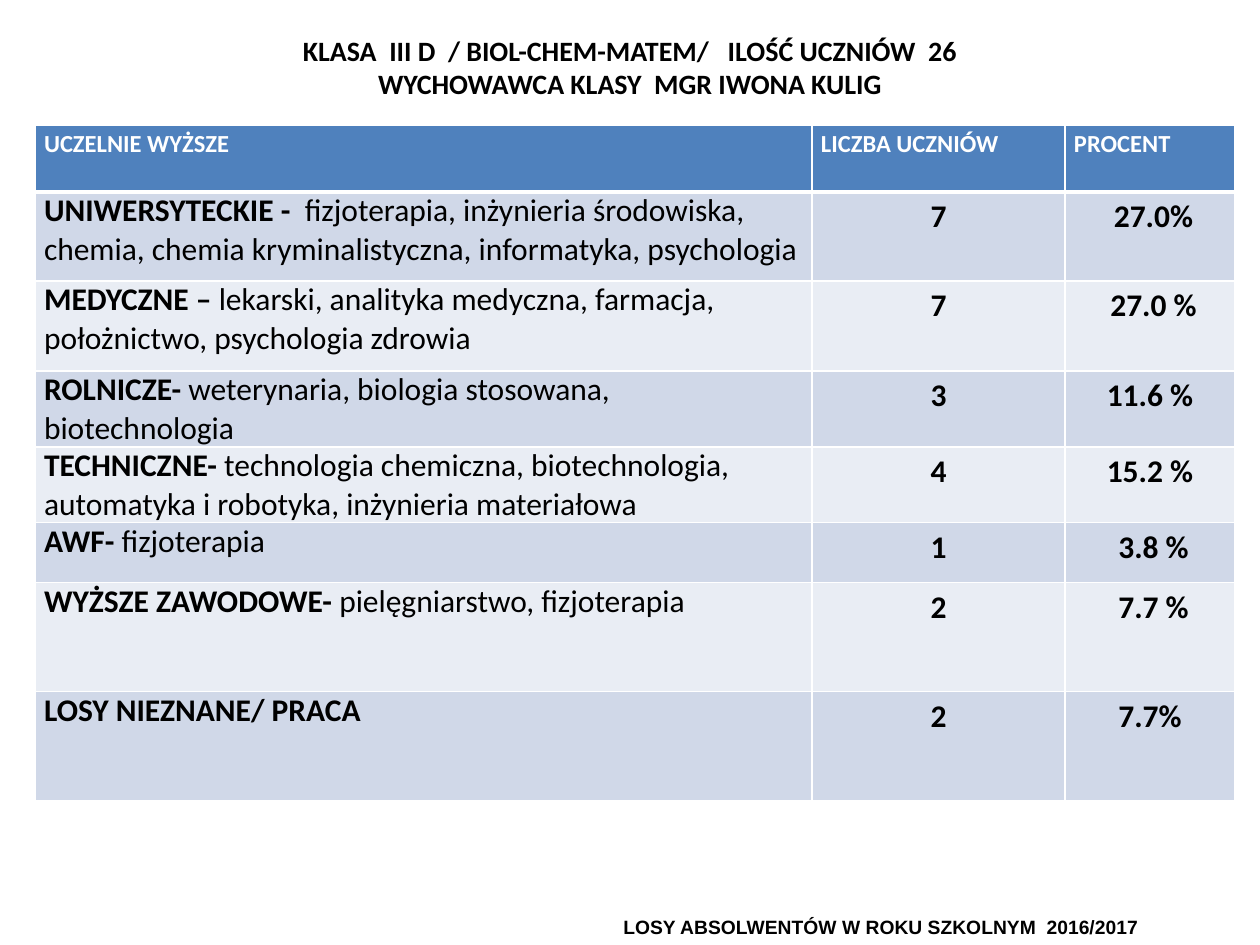
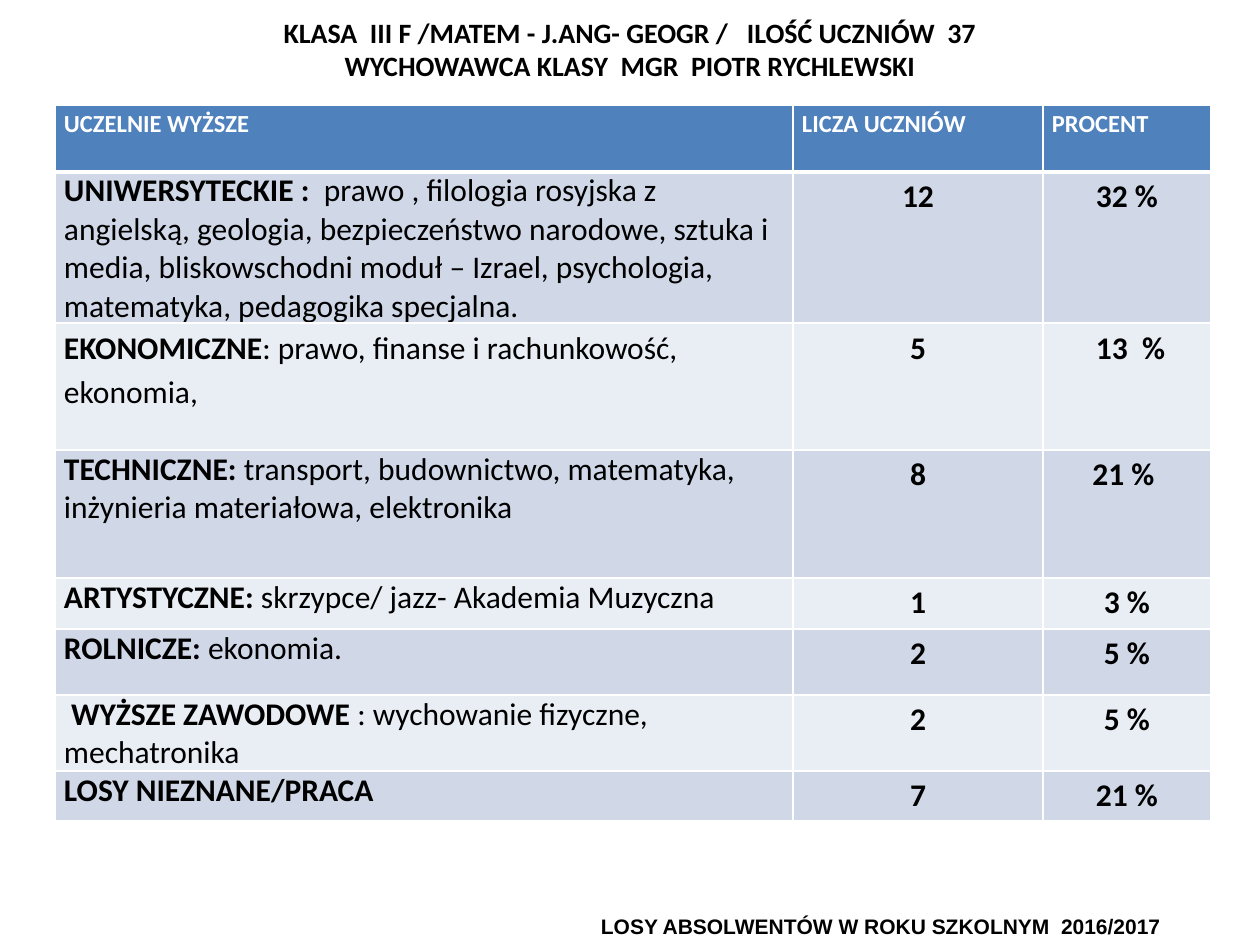
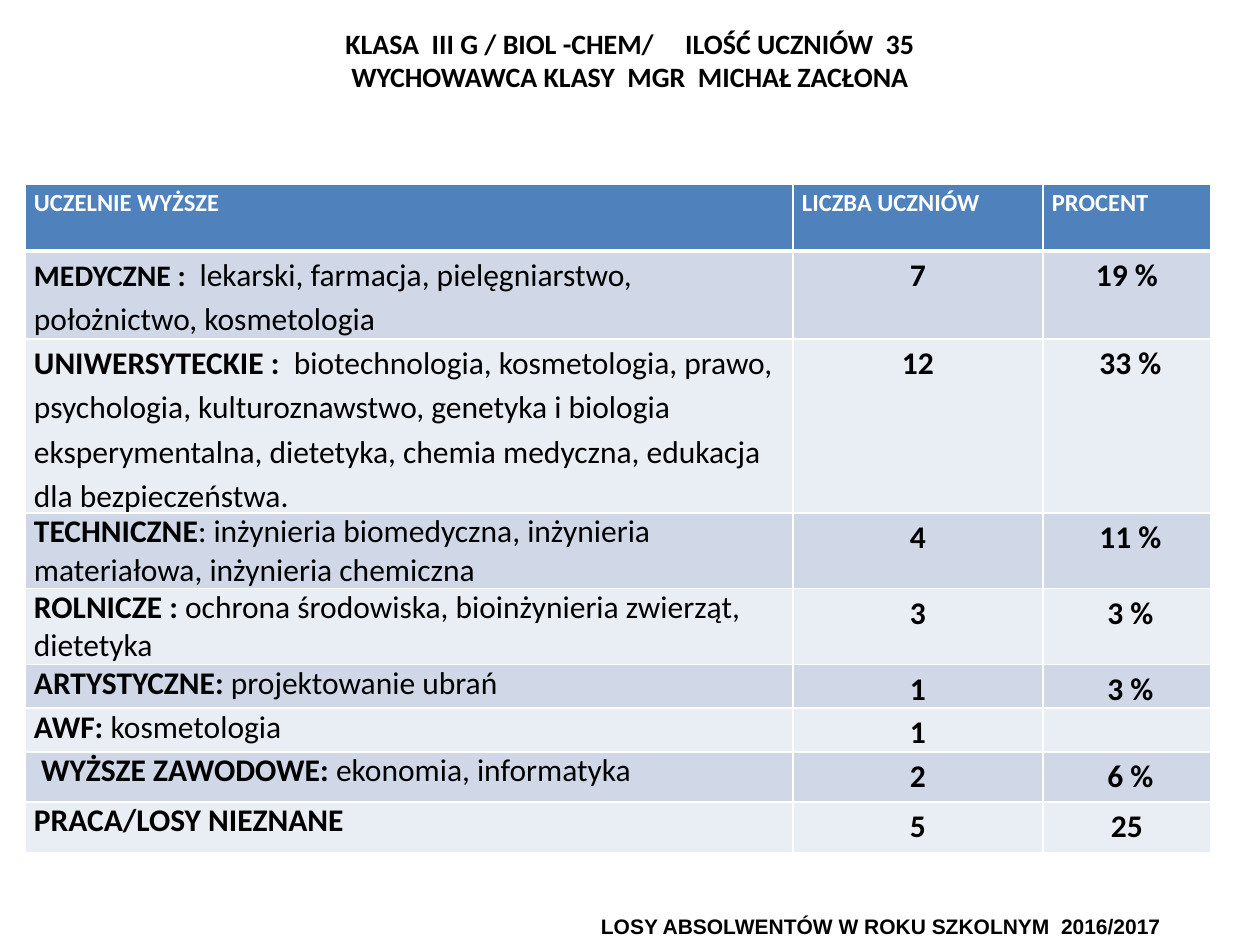
from dataclasses import dataclass

from lxml.etree import SubElement
from pptx import Presentation
from pptx.dml.color import RGBColor
from pptx.enum.text import MSO_ANCHOR as Anchor, MSO_AUTO_SIZE as AutoSize, PP_ALIGN as Align
from pptx.oxml.ns import qn
from pptx.util import Emu, Pt

EMU_PER_PX = 914400 / 126


@dataclass(frozen=True)
class Theme:
    """Colours, fonts and type sizes shared by the slides."""
    black: str = "000000"
    white: str = "FFFFFF"
    header: str = "4F81BD"
    bands: tuple = ("D0D8E8", "E9EDF4")
    body_font: str = "Calibri"
    footer_font: str = "Arial"
    title_size: int = 16
    header_size: int = 14
    body_size: int = 18
    loose: float = 1.15
    thin: int = 1
    thick: int = 3


@dataclass(frozen=True)
class Row:
    """One kind of school with its courses, pupil count and share."""
    school: str
    courses: str
    pupils: str
    share: str
    height: int
    spacing: float = 1.0
    school_size: int = 18


@dataclass(frozen=True)
class ClassReport:
    """The content and layout of one class slide."""
    title: tuple
    title_top: int
    table_left: int
    table_top: int
    columns: tuple
    header_height: int
    rows: tuple
    count_heading: str = "LICZBA UCZNIÓW"
    footer_size: int = 12


THEME = Theme()
FOOTER = "LOSY ABSOLWENTÓW W ROKU SZKOLNYM  2016/2017"

REPORTS = (
    ClassReport(
        ("KLASA  III D  / BIOL-CHEM-MATEM/   ILOŚĆ UCZNIÓW  26",
         "WYCHOWAWCA KLASY  MGR IWONA KULIG"),
        27, 35, 125, (777, 253, 170), 67,
        (
            Row("UNIWERSYTECKIE - ", " fizjoterapia, inżynieria środowiska, chemia, "
                "chemia kryminalistyczna, informatyka, psychologia", "7", " 27.0%", 89),
            Row("MEDYCZNE – ", "lekarski, analityka medyczna, farmacja, położnictwo, "
                "psychologia zdrowia", "7", " 27.0 %", 90),
            Row("ROLNICZE- ", "weterynaria, biologia stosowana, biotechnologia",
                "3", "11.6 %", 76),
            Row("TECHNICZNE- ", "technologia chemiczna, biotechnologia, automatyka "
                "i robotyka, inżynieria materiałowa", "4", "15.2 %", 75),
            Row("AWF- ", "fizjoterapia", "1", " 3.8 %", 60),
            Row("WYŻSZE ZAWODOWE- ", "pielęgniarstwo, fizjoterapia", "2", " 7.7 %", 109),
            Row("LOSY NIEZNANE/ PRACA", "", "2", "7.7%", 109),
        ),
        footer_size=11,
    ),
    ClassReport(
        ("KLASA  III F /MATEM - J.ANG- GEOGR /   ILOŚĆ UCZNIÓW  37",
         "WYCHOWAWCA KLASY  MGR  PIOTR RYCHLEWSKI"),
        9, 55, 105, (738, 250, 168), 67,
        (
            Row("UNIWERSYTECKIE :  ", "prawo , filologia rosyjska z angielską, geologia, "
                "bezpieczeństwo narodowe, sztuka i media, bliskowschodni moduł – Izrael, "
                "psychologia, matematyka, pedagogika specjalna.", "12", "32 %", 151),
            Row("EKONOMICZNE", ": prawo, finanse i rachunkowość, ekonomia,",
                "5", " 13  %", 127, THEME.loose),
            Row("TECHNICZNE:", " transport, budownictwo, matematyka, inżynieria "
                "materiałowa, elektronika", "8", "21 % ", 128),
            Row("ARTYSTYCZNE: ", "skrzypce/ jazz- Akademia Muzyczna", "1", "3 %", 51),
            Row("ROLNICZE: ", "ekonomia.", "2", "5 %", 66),
            Row(" WYŻSZE ZAWODOWE ", ": wychowanie fizyczne, mechatronika", "2", "5 %", 76),
            Row("LOSY NIEZNANE/PRACA", "", "7", "21 %", 50),
        ),
        count_heading="LICZA UCZNIÓW",
    ),
    ClassReport(
        ("KLASA  III G / BIOL -CHEM/     ILOŚĆ UCZNIÓW  35",
         "WYCHOWAWCA KLASY  MGR  MICHAŁ ZACŁONA"),
        20, 25, 184, (768, 250, 168), 67,
        (
            Row("MEDYCZNE :  ", "lekarski, farmacja, pielęgniarstwo, położnictwo, "
                "kosmetologia", "7", "19 %", 88, THEME.loose, 17),
            Row("UNIWERSYTECKIE : ", " biotechnologia, kosmetologia, prawo, psychologia, "
                "kulturoznawstwo, genetyka i biologia eksperymentalna, dietetyka, chemia "
                "medyczna, edukacja dla bezpieczeństwa.", "12", " 33 %", 174, THEME.loose),
            Row("TECHNICZNE", ": inżynieria biomedyczna, inżynieria materiałowa, "
                "inżynieria chemiczna", "4", " 11 %", 75),
            Row("ROLNICZE : ", "ochrona środowiska, bioinżynieria zwierząt, dietetyka",
                "3", " 3 %", 76),
            Row("ARTYSTYCZNE: ", "projektowanie ubrań", "1", " 3 %", 43),
            Row("AWF: ", "kosmetologia", "1", "", 44),
            Row(" WYŻSZE ZAWODOWE: ", "ekonomia, informatyka", "2", " 6 %", 50),
            Row("PRACA/LOSY NIEZNANE", "", "5", "25", 51),
        ),
    ),
)


def px(length):
    """Turn pixels into EMU."""
    return Emu(round(length * EMU_PER_PX))


def format_font(font, size, color=THEME.black, bold=True, name=THEME.body_font):
    """Set the look of a font."""
    font.name, font.size, font.bold = name, Pt(size), bold
    font.color.rgb = RGBColor.from_string(color)


def add_title(slide, lines, top):
    """Place the two-line class heading in the title placeholder."""
    title = slide.shapes.title
    title.left, title.top, title.width, title.height = map(px, (63, top, 1134, 80))
    frame = title.text_frame
    frame.text = "\v".join(lines)
    frame.auto_size = AutoSize.NONE
    frame.vertical_anchor = Anchor.MIDDLE
    paragraph = frame.paragraphs[0]
    paragraph.alignment = Align.CENTER
    for run in paragraph.runs:
        format_font(run.font, THEME.title_size)


def add_footer(slide, size):
    """Add the school-year line at the bottom of the slide."""
    frame = slide.shapes.add_textbox(*map(px, (572, 908, 618, 37))).text_frame
    frame.word_wrap = True
    frame.vertical_anchor = Anchor.BOTTOM
    frame.text = FOOTER
    paragraph = frame.paragraphs[0]
    paragraph.alignment = Align.CENTER
    format_font(paragraph.runs[0].font, size, name=THEME.footer_font)


def style_cell(cell, fill, top=THEME.thin, bottom=THEME.thin):
    """Give a cell its margins, white borders and fill."""
    cell.margin_left = cell.margin_right = px(9)
    cell.margin_top = cell.margin_bottom = 0
    properties = cell._tc.get_or_add_tcPr()
    widths = {"lnL": THEME.thin, "lnR": THEME.thin, "lnT": top, "lnB": bottom}
    for tag, width in widths.items():
        line = SubElement(properties, qn(f"a:{tag}"), w=str(Pt(width)))
        SubElement(SubElement(line, qn("a:solidFill")), qn("a:srgbClr"), val=THEME.white)
    cell.fill.solid()
    cell.fill.fore_color.rgb = RGBColor.from_string(fill)


def write_cell(cell, runs, spacing=THEME.loose, alignment=Align.LEFT):
    """Write runs of text, size, colour and weight into a cell."""
    paragraph = cell.text_frame.paragraphs[0]
    paragraph.alignment = alignment
    paragraph.line_spacing = spacing
    for text, size, color, bold in runs:
        if text:
            run = paragraph.add_run()
            run.text = text
            format_font(run.font, size, color, bold)


def fill_header(cells, headings):
    """Fill the heading row of a table."""
    for cell, heading in zip(cells, headings):
        style_cell(cell, THEME.header, bottom=THEME.thick)
        write_cell(cell, [(heading, THEME.header_size, THEME.white, True)])


def fill_row(cells, row, index):
    """Fill one body row, in the colour of its band."""
    for cell in cells:
        style_cell(cell, THEME.bands[index % 2], THEME.thin if index else THEME.thick)
    write_cell(cells[0], [(row.school, row.school_size, THEME.black, True),
                          (row.courses, THEME.body_size, THEME.black, False)], row.spacing)
    for cell, value in zip(cells[1:], (row.pupils, row.share)):
        write_cell(cell, [(value, THEME.body_size, THEME.black, True)],
                   alignment=Align.CENTER)


def add_results_table(slide, report):
    """Add the table of further schools chosen by the class."""
    heights = [report.header_height] + [row.height for row in report.rows]
    table = slide.shapes.add_table(
        len(heights), len(report.columns), px(report.table_left), px(report.table_top),
        px(sum(report.columns)), px(sum(heights))).table
    for column, width in zip(table.columns, report.columns):
        column.width = px(width)
    for table_row, height in zip(table.rows, heights):
        table_row.height = px(height)
    header, *body = [list(table_row.cells) for table_row in table.rows]
    fill_header(header, ("UCZELNIE WYŻSZE", report.count_heading, "PROCENT"))
    for index, (cells, row) in enumerate(zip(body, report.rows)):
        fill_row(cells, row, index)


def main():
    """Build the class slides and save them."""
    presentation = Presentation()
    presentation.slide_width, presentation.slide_height = px(1260), px(945)
    for report in REPORTS:
        slide = presentation.slides.add_slide(presentation.slide_layouts.get_by_name("Title Only"))
        add_title(slide, report.title, report.title_top)
        add_footer(slide, report.footer_size)
        add_results_table(slide, report)
    presentation.save("out.pptx")


if __name__ == "__main__":
    main()
